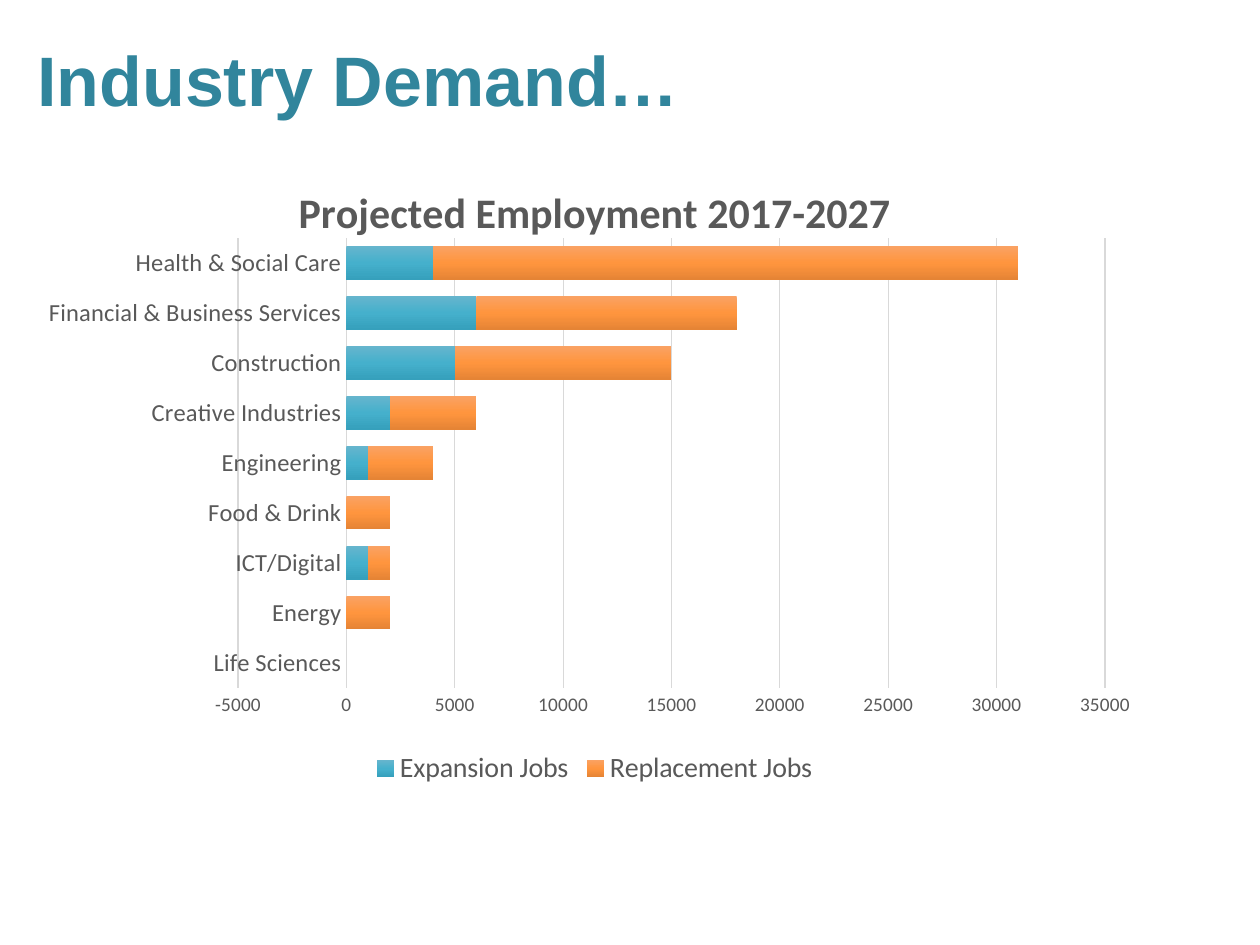
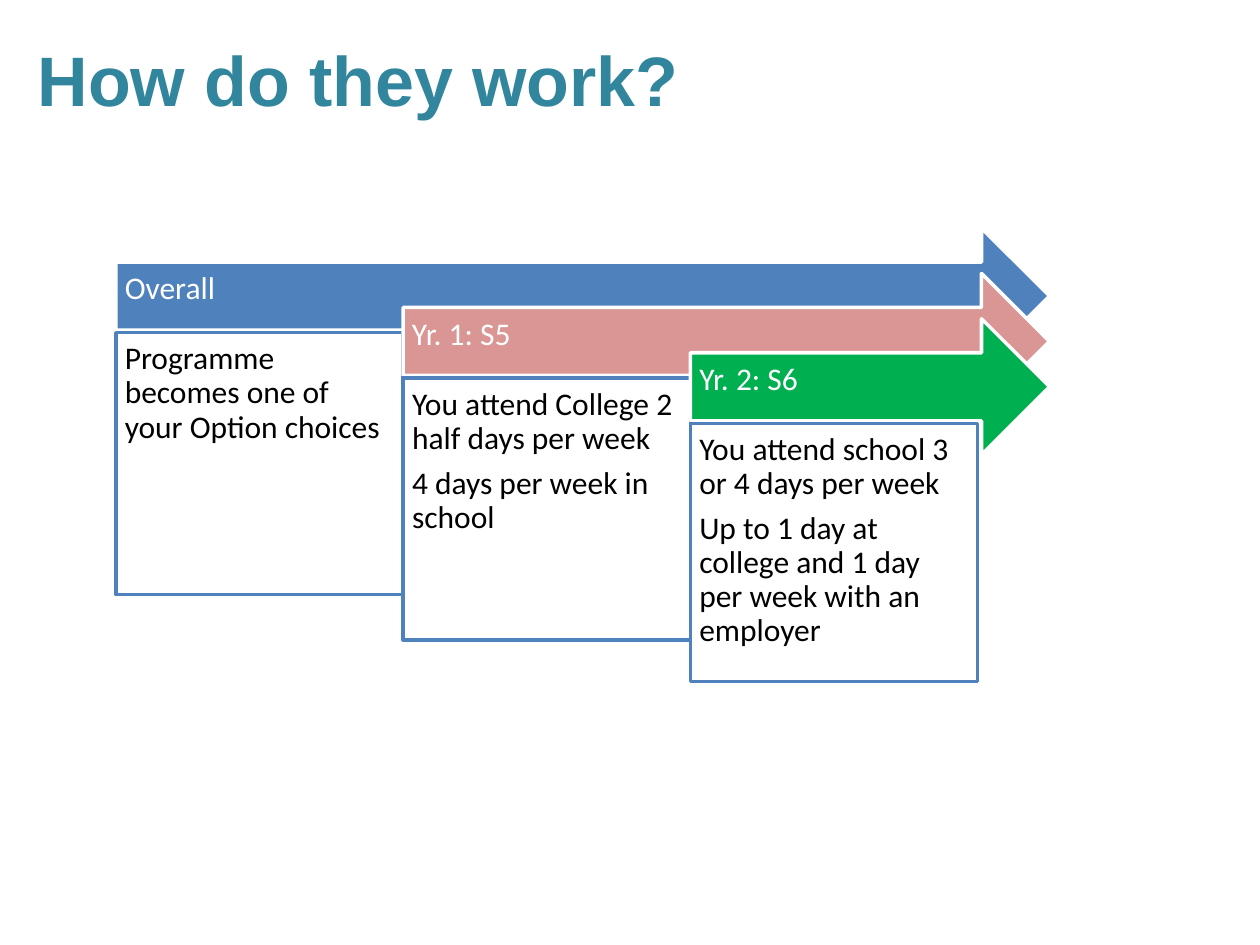
from copy import deepcopy

from pptx import Presentation
from pptx import util as u
from pptx.chart import data
from pptx.dml.color import RGBColor
from pptx.enum import chart as ch, shapes, text
from pptx.oxml import ns, parse_xml

TEAL, BLUE, PINK, GREEN = "31859C", "4F81BD", "D99694", "00B050"
GREY, PALE, WHITE, BLACK = "595959", "D9D9D9", "FFFFFF", "000000"

CHART = (0.2, 1.25, 9.04, 5.03)
PLOT = (1.69, 0.64, 6.88, 3.57)
JOBS = [
    ("Life Sciences", 0, 0),
    ("Energy", 0, 2000),
    ("ICT/Digital", 1000, 1000),
    ("Food & Drink", 0, 2000),
    ("Engineering", 1000, 3000),
    ("Creative Industries", 2000, 4000),
    ("Construction", 5000, 10000),
    ("Financial & Business Services", 6000, 12000),
    ("Health & Social Care", 4000, 27000),
]
SERIES = [
    ("Expansion Jobs", ("66B5CD", "45B0CC", "36A0BC")),
    ("Replacement Jobs", ("FAA263", "FF953E", "E58435")),
]
STAGES = [
    ("Overall", BLUE, 2.08, ["Programme becomes one of your Option choices"]),
    ("Yr. 1: S5", PINK, 2.08,
     ["You attend College 2 half days per week", "4 days per week in school"]),
    ("Yr. 2: S6", GREEN, 2.05,
     ["You attend school 3 or 4 days per week",
      "Up to 1 day at college and 1 day per week with an employer"]),
]


def color(code):
    return RGBColor.from_string(code)


def assign(item, **values):
    for name, value in values.items():
        setattr(item, name, value)


def style(font, size, code, face="Calibri", bold=False):
    assign(font, size=u.Pt(size), name=face, bold=bold)
    font.color.rgb = color(code)


def stroke(line, code, width):
    line.color.rgb = color(code)
    line.width = u.Pt(width)


def add_title(slide, words):
    box = slide.shapes.add_textbox(*map(u.Inches, (0.2, 0, 8.22, 1.25)))
    frame = box.text_frame
    assign(frame, word_wrap=True, vertical_anchor=text.MSO_ANCHOR.MIDDLE, text=words)
    style(frame.paragraphs[0].runs[0].font, 40, TEAL, "Arial", True)


def shade(series, codes):
    fill = series.format.fill
    fill.gradient()
    fill.gradient_angle = 270
    stops = series._element.find(".//" + ns.qn("a:gsLst"))
    stops.append(deepcopy(stops[-1]))
    for stop, code, place in zip(fill.gradient_stops, codes, (0, 0.5, 1)):
        stop.color.rgb = color(code)
        stop.position = place


def place_plot(chart):
    area = chart._chartSpace.chart.plotArea
    for old in area.findall(ns.qn("c:layout")):
        area.remove(old)
    parts = [length / CHART[2 + index % 2] for index, length in enumerate(PLOT)]
    sides = "".join(f'<c:{tag} val="{value}"/>' for tag, value in (
        ("layoutTarget", "inner"), ("xMode", "edge"), ("yMode", "edge"), *zip("xywh", parts)))
    area.insert(0, parse_xml(
        f'<c:layout {ns.nsdecls("c")}><c:manualLayout>{sides}</c:manualLayout></c:layout>'))


def add_bars(slide):
    names, *columns = zip(*JOBS)
    source = data.CategoryChartData()
    source.categories = names
    for (label, _), values in zip(SERIES, columns):
        source.add_series(label, values)
    chart = slide.shapes.add_chart(
        ch.XL_CHART_TYPE.BAR_STACKED, *map(u.Inches, CHART), source).chart
    style(chart.font, 11, BLACK)
    assign(chart, has_title=True, has_legend=True)
    frame = chart.chart_title.text_frame
    frame.text = "Projected Employment 2017-2027"
    para = frame.paragraphs[0]
    for font in (para.font, para.runs[0].font):
        style(font, 24, GREY, bold=True)
    chart.chart_title.include_in_layout = False
    assign(chart.legend, position=ch.XL_LEGEND_POSITION.BOTTOM, include_in_layout=False)
    style(chart.legend.font, 16, GREY)

    plot = chart.plots[0]
    assign(plot, gap_width=50, overlap=100, vary_by_categories=False)
    for series, (_, codes) in zip(plot.series, SERIES):
        series.invert_if_negative = False
        shade(series, codes)

    for axis, size in ((chart.category_axis, 14), (chart.value_axis, 11)):
        assign(axis, major_tick_mark=ch.XL_TICK_MARK.NONE,
               minor_tick_mark=ch.XL_TICK_MARK.NONE)
        style(axis.tick_labels.font, size, GREY)
    stroke(chart.category_axis.format.line, PALE, 1)
    scale = chart.value_axis
    assign(scale, minimum_scale=-5000, maximum_scale=35000, major_unit=5000)
    scale.format.line.fill.background()
    stroke(scale.major_gridlines.format.line, PALE, 0.75)
    place_plot(chart)


def add_block(slide, kind, area, fill, edge, lines, ink, insets, anchor):
    block = slide.shapes.add_shape(kind, *map(u.Inches, area))
    block.shadow.inherit = False
    block.fill.solid()
    block.fill.fore_color.rgb = color(fill)
    stroke(block.line, edge, 2)
    frame = block.text_frame
    assign(frame, word_wrap=True, vertical_anchor=anchor)
    for side, inset in zip(("left", "top", "right", "bottom"), insets):
        setattr(frame, "margin_" + side, u.Inches(inset))
    frame.text = "\n".join(lines)
    for para in frame.paragraphs:
        assign(para, alignment=text.PP_ALIGN.LEFT, line_spacing=0.9, space_after=u.Pt(6.3))
        style(para.runs[0].font, 18, ink)


def add_stage(slide, index, label, fill, height, lines):
    left, top = 0.92 + 2.28 * index, 1.81 + 0.36 * index
    add_block(slide, shapes.MSO_SHAPE.RIGHT_ARROW, (left, top, 8.33 - left, 1.08),
              fill, WHITE, [label], WHITE, (0.07, 0.07, 0.28, 0.17), text.MSO_ANCHOR.MIDDLE)
    add_block(slide, shapes.MSO_SHAPE.RECTANGLE, (left, top + 0.83, 2.28, height),
              WHITE, BLUE, lines, BLACK, (0.07, 0.08, 0.09, 0.07), text.MSO_ANCHOR.TOP)


def main():
    deck = Presentation()
    assign(deck, slide_width=u.Inches(10), slide_height=u.Inches(7.5))
    demand, work = (deck.slides.add_slide(deck.slide_layouts[6]) for _ in range(2))
    add_bars(demand)
    add_title(demand, "Industry Demand…")
    add_title(work, "How do they work?")
    for index, stage in enumerate(STAGES):
        add_stage(work, index, *stage)
    deck.save("out.pptx")


if __name__ == "__main__":
    main()
